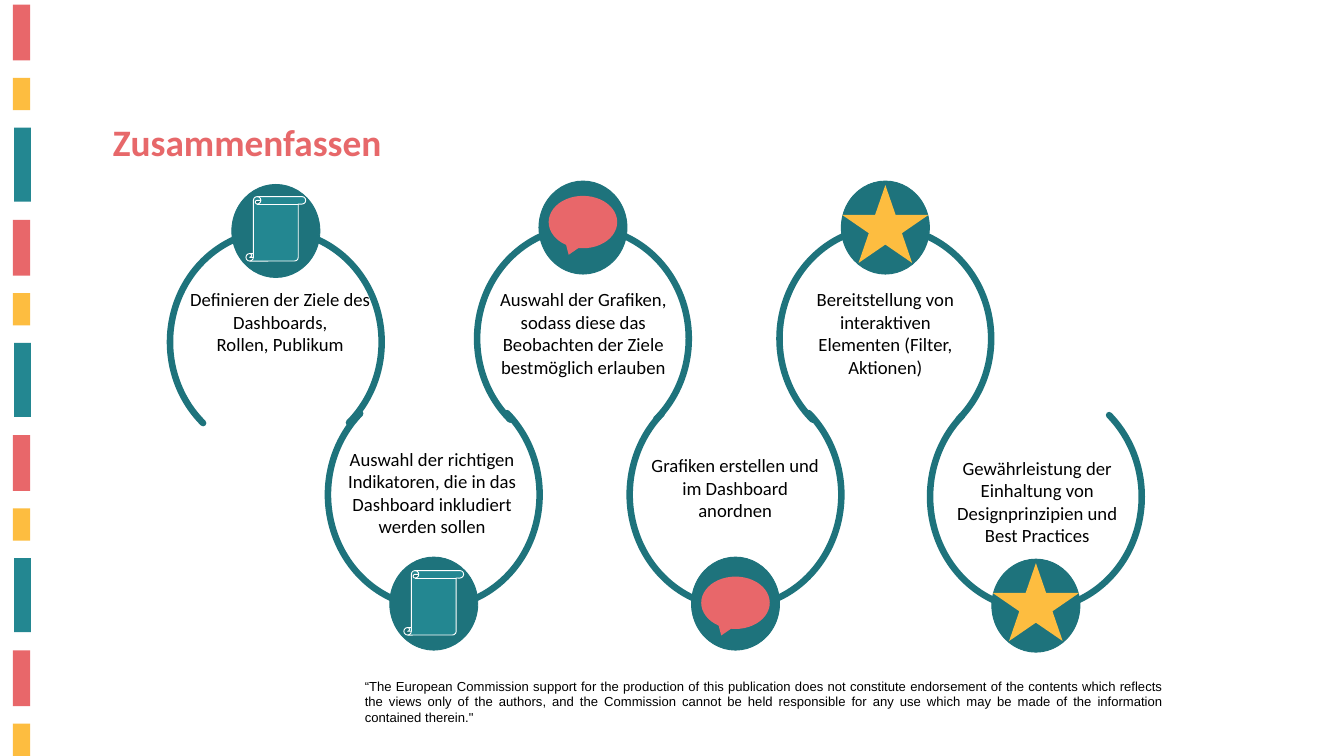
"""Build the summary slide: six steps along a winding line."""
import pptx
import pptx.util
import pptx.dml.color
import pptx.enum.shapes
import pptx.enum.text
import pptx.oxml.ns

RGB = pptx.dml.color.RGBColor.from_string
SHAPE = pptx.enum.shapes.MSO_SHAPE
ALIGN = pptx.enum.text.PP_ALIGN

COLORS = {
    "coral": "E8676A", "title": "E7686A", "yellow": "FDBD40", "teal": "238791",
    "dark": "1E737C", "white": "FFFFFF", "black": "000000",
}
FONTS = {
    "title": {"name": "Calibri", "size": pptx.util.Pt(40), "bold": True},
    "step": {"name": "Calibri", "size": pptx.util.Pt(20)},
    "footer": {"name": "Arial", "size": pptx.util.Pt(14)},
}
FRAME = {
    "word_wrap": True,
    "auto_size": pptx.enum.text.MSO_AUTO_SIZE.NONE,
    "vertical_anchor": pptx.enum.text.MSO_ANCHOR.TOP,
}

prs = pptx.Presentation()
prs.slide_width = pptx.util.Inches(20)
prs.slide_height = pptx.util.Inches(11.25)
COL = prs.slide_width / 100
ROW = prs.slide_height / 100
slide = prs.slides.add_slide(prs.slide_layouts[5])


def draw(kind, x, y, w, h, fill=None, line=None, width=1):
    s = slide.shapes.add_shape(kind, int(x * COL), int(y * ROW), int(w * COL), int(h * ROW))
    s.shadow.inherit = False
    if fill:
        s.fill.solid()
        s.fill.fore_color.rgb = RGB(COLORS[fill])
    else:
        s.fill.background()
    if line:
        s.line.color.rgb = RGB(COLORS[line])
        s.line.width = pptx.util.Pt(width)
    else:
        s.line.fill.background()
    return s


def write(s, x, y, w, h, lines, font, color, align):
    box = {"left": x * COL, "top": y * ROW, "width": w * COL, "height": h * ROW}
    for name, value in box.items():
        setattr(s, name, int(value))
    tf = s.text_frame
    for name, value in FRAME.items():
        setattr(tf, name, value)
    for i, line in enumerate(lines):
        p = tf.paragraphs[0] if i == 0 else tf.add_paragraph()
        p.alignment = align
        r = p.add_run()
        r.text = line
        for name, value in FONTS[font].items():
            setattr(r.font, name, value)
        r.font.color.rgb = RGB(COLORS[color])


stripes = [
    ("coral", 0.95, 0.62, 1.3, 7.38),
    ("yellow", 0.95, 10.31, 1.3, 4.27),
    ("teal", 1.05, 16.89, 1.25, 9.8),
]
for i in range(11):
    color, x, y, w, h = stripes[i % 3]
    draw(SHAPE.RECTANGLE, x, y + i // 3 * 28.47, w, h, color)

write(slide.shapes.title, 7.9, 15.29, 32.9, 6.84, ["Zusammenfassen"], "title", "title", ALIGN.LEFT)

icons = {
    "scroll": (SHAPE.VERTICAL_SCROLL, 4.45, 8.53, "teal", "white"),
    "speech": (SHAPE.OVAL_CALLOUT, 5.1, 6.93, "coral", None),
    "star": (SHAPE.STAR_5_POINT, 6.45, 10.31, "yellow", None),
}
steps = [
    (12.65, 30.49, "scroll", 1.6, (13.6, 37.69, 14.5),
     ["Definieren der Ziele des Dashboards,", "Rollen, Publikum"]),
    (24.4, 50.49, "scroll", 1.78, (24.45, 58.76, 15.4),
     ["Auswahl der richtigen Indikatoren, die in das Dashboard inkludiert werden sollen"]),
    (35.5, 30.04, "speech", 1.96, (35.7, 37.69, 15.4),
     ["Auswahl der Grafiken, sodass diese das Beobachten der Ziele bestmöglich erlauben"]),
    (46.85, 50.49, "speech", 2.58, (47.45, 59.64, 14.5),
     ["Grafiken erstellen und im Dashboard anordnen"]),
    (58, 30.04, "star", 0.53, (59, 37.69, 13.75),
     ["Bereitstellung von interaktiven Elementen (Filter, Aktionen)"]),
    (69.2, 50.76, "star", 0.53, (69.45, 60, 15.45),
     ["Gewährleistung der Einhaltung von Designprinzipien und Best Practices"]),
]
for i, (x, y, icon, drop, (tx, ty, tw), lines) in enumerate(steps):
    below = i % 2 == 1
    arc = draw(SHAPE.ARC, x, y, 15.75, 29.87 if below else 29.51, line="dark", width=7)
    arc.adjustments[0], arc.adjustments[1] = 79.141, 28.684
    arc.rotation = 180 if below else 0
    arc.element.spPr.find(pptx.oxml.ns.qn("a:ln")).set("cap", "rnd")

    cy = y + 23.2 if below else y - 6.09
    draw(SHAPE.OVAL, x + 4.6, cy, 6.55, 12.3, "dark", "dark")
    kind, w, h, fill, line = icons[icon]
    draw(kind, x + 4.6 + (6.55 - w) / 2, cy + drop, w, h, fill, line)

    s = slide.shapes.add_textbox(0, 0, 0, 0)
    write(s, tx, ty, tw, 12.89, lines, "step", "black", ALIGN.CENTER)

footer = (
    "“The European Commission support for the production of this publication does not "
    "constitute endorsement of the contents which reflects the views only of the authors, "
    "and the Commission cannot be held responsible for any use which may be made of the "
    'information contained therein."'
)
s = slide.shapes.add_textbox(0, 0, 0, 0)
write(s, 26.65, 89.24, 60.4, 7.2, [footer], "footer", "black", ALIGN.JUSTIFY)

prs.save("out.pptx")
